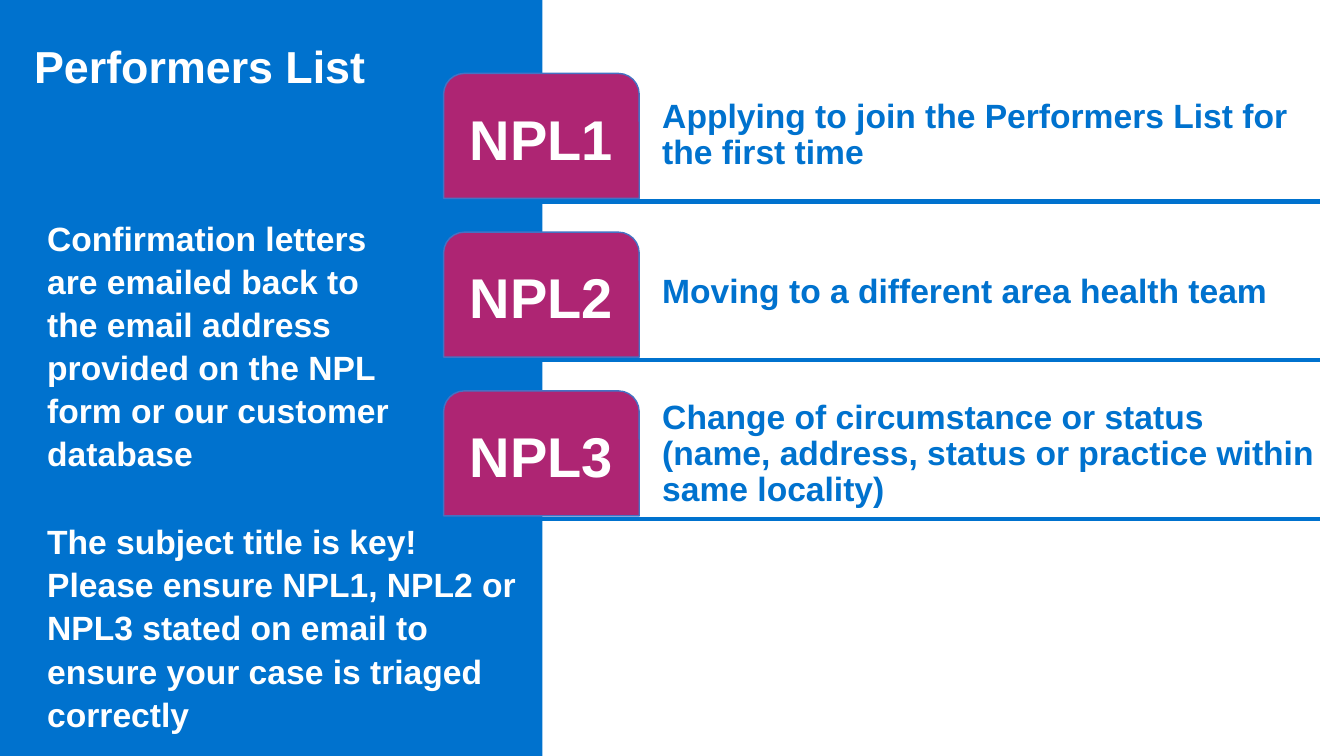
from lxml import etree
from pptx import Presentation
from pptx import util as u
from pptx.dml.color import RGBColor
from pptx.enum import shapes, text
from pptx.oxml.ns import qn

BLUE, PINK, EDGE, WHITE = "0072CE", "AE2573", "4472C4", "FFFFFF"
ROW_PITCH = 4.0  # cm between form rows

# Form name, description, top and height of the description in cm
FORMS = [
    ("NPL1", "Applying to join the Performers List for the first time", 1.52, 3.81),
    ("NPL2", "Moving to a different area health team", 5.59, 3.58),
    ("NPL3", "Change of circumstance or status (name, address, status or "
             "practice within same locality)", 9.86, 3.2),
]
LETTERS = ("Confirmation letters are emailed back to the email address "
           "provided on the NPL form or our customer database")
SUBJECT = ("The subject title is key! Please ensure NPL1, NPL2 or NPL3 stated "
           "on email to ensure your case is triaged correctly")


def rgb(value):
    return RGBColor.from_string(value)


def apply(obj, values):
    for name, value in values.items():
        setattr(obj, name, value)


def write(sp, words, size, color, spacing=1.0, align=text.PP_ALIGN.LEFT,
          anchor=text.MSO_ANCHOR.TOP, insets=(0.25, 0.13, 0.25, 0.13)):
    """Fill a shape with one bold paragraph; insets are left, top, right, bottom."""
    tf = sp.text_frame
    sides = ("margin_left", "margin_top", "margin_right", "margin_bottom")
    apply(tf, dict(zip(sides, map(u.Cm, insets))))
    apply(tf, {"word_wrap": True, "auto_size": text.MSO_AUTO_SIZE.NONE,
               "vertical_anchor": anchor})
    p = tf.paragraphs[0]
    apply(p, {"alignment": align, "line_spacing": spacing,
              "space_before": u.Pt(0), "space_after": u.Pt(0)})
    r = p.add_run()
    r.text = words
    apply(r.font, {"name": "Arial", "size": u.Pt(size), "bold": True})
    r.font.color.rgb = rgb(color)
    return p


def fill_placeholder(sp, box, words, size, spacing):
    apply(sp, dict(zip(("left", "top", "width", "height"), map(u.Cm, box))))
    p = write(sp, words, size, WHITE, spacing)
    pPr = p._p.get_or_add_pPr()
    pPr.set("marL", "0")
    pPr.set("indent", "0")
    etree.SubElement(pPr, qn("a:buNone"))


def add_block(s, kind, box, color):
    sp = s.shapes.add_shape(kind, *map(u.Cm, box))
    sp.shadow.inherit = False
    sp.fill.solid()
    sp.fill.fore_color.rgb = rgb(color)
    sp.line.fill.background()
    return sp


def add_rule(s, y):
    line = s.shapes.add_connector(shapes.MSO_CONNECTOR.STRAIGHT,
                                  u.Cm(10.69), u.Cm(y), u.Cm(33.27), u.Cm(y))
    line.line.color.rgb = rgb(BLUE)
    line.line.width = u.Pt(3)
    etree.SubElement(line._element.spPr, qn("a:effectLst"))


def add_badge(s, name, y):
    sp = add_block(s, shapes.MSO_SHAPE.ROUND_2_SAME_RECTANGLE,
                   (11.18, y, 4.93, 3.15), PINK)
    sp.line.color.rgb = rgb(EDGE)
    sp.line.width = u.Pt(1)
    write(sp, name, 40, WHITE, 0.9, text.PP_ALIGN.CENTER,
          text.MSO_ANCHOR.MIDDLE, (0.35, 0.35, 0.35, 0.2))


def add_description(s, words, top, height):
    sp = s.shapes.add_textbox(u.Cm(16.56), u.Cm(top), u.Cm(16.71), u.Cm(height))
    write(sp, words, 24, BLUE, 0.9, anchor=text.MSO_ANCHOR.MIDDLE,
          insets=(0.13,) * 4)


def main():
    prs = Presentation()
    prs.slide_width, prs.slide_height = u.Cm(33.87), u.Cm(19.05)
    s = prs.slides.add_slide(prs.slide_layouts.get_by_name("Two Content"))

    # Blue side panel, behind the placeholders
    panel = add_block(s, shapes.MSO_SHAPE.RECTANGLE, (0, 0, 13.67, 19.05), BLUE)
    s.shapes._spTree.insert(2, panel._element)

    # Title and side notes
    title, letters, subject = list(s.placeholders)[:3]
    fill_placeholder(title, (0.61, 0.84, 11.99, 1.63), "Performers List", 32, 1.0)
    fill_placeholder(letters, (0.94, 5.28, 9.75, 6.76), LETTERS, 24, 1.07)
    fill_placeholder(subject, (0.94, 12.93, 12.5, 5.66), SUBJECT, 24, 1.07)

    # One row for each form
    for i, (name, words, top, height) in enumerate(FORMS):
        add_rule(s, 5.08 + i * ROW_PITCH)
        add_badge(s, name, 1.85 + i * ROW_PITCH)
        add_description(s, words, top, height)

    prs.save("out.pptx")


if __name__ == "__main__":
    main()
